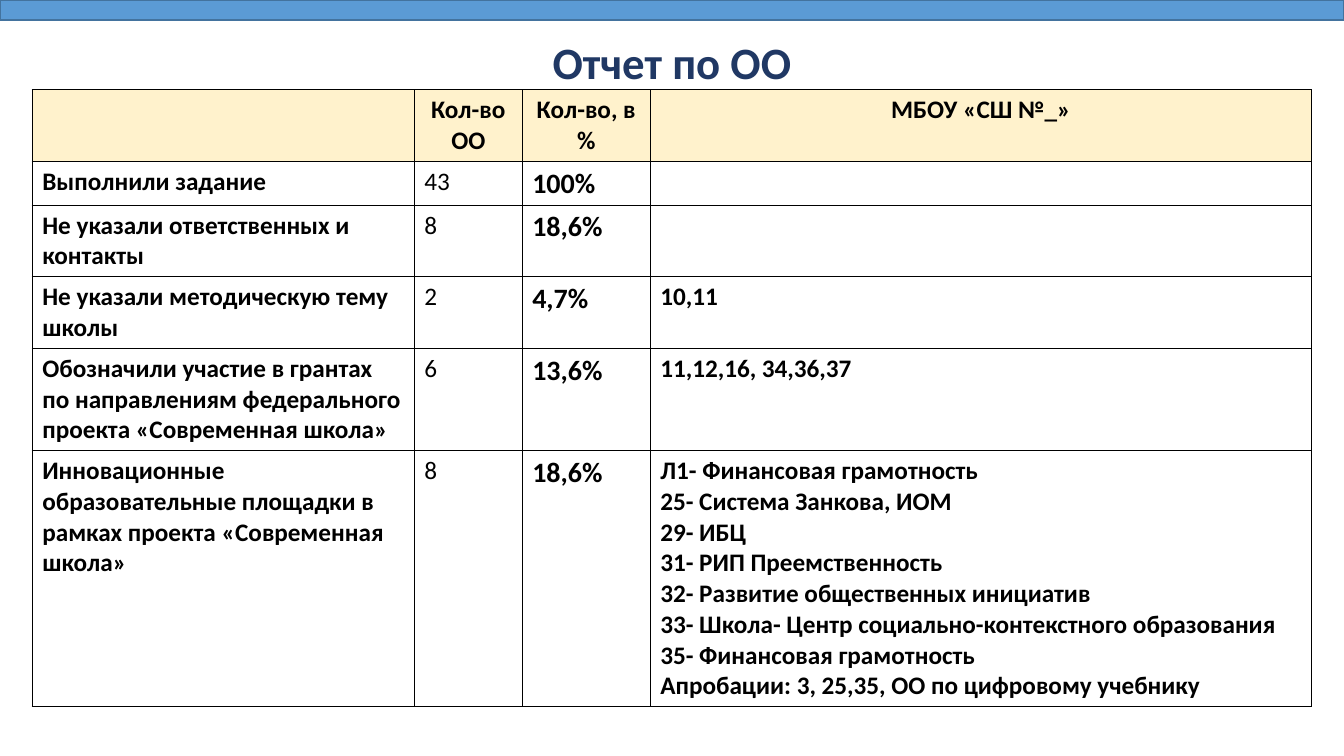
"""Builds the slide with the school report table."""
from lxml.etree import SubElement
from pptx import Presentation
from pptx.dml.color import RGBColor
from pptx.enum.shapes import MSO_SHAPE
from pptx.enum.text import MSO_ANCHOR, PP_ALIGN
from pptx.oxml.ns import qn
from pptx.util import Inches, Pt

TITLE = "Отчет по ОО"
HEADER = ["", "Кол-во ОО", "Кол-во, в %", "МБОУ «СШ №_»"]
ROWS = [
    ("Выполнили задание", "43", "100%", ""),
    ("Не указали ответственных и контакты", "8", "18,6%", ""),
    ("Не указали методическую тему школы", "2", "4,7%", "10,11"),
    ("Обозначили участие в грантах по направлениям федерального проекта «Современная школа»",
     "6", "13,6%", "11,12,16, 34,36,37"),
    ("Инновационные образовательные площадки в рамках проекта «Современная школа»",
     "8", "18,6%", [
         "Л1- Финансовая грамотность",
         "25- Система Занкова, ИОМ",
         "29- ИБЦ",
         "31- РИП Преемственность",
         "32- Развитие общественных инициатив",
         "33- Школа- Центр социально-контекстного образования",
         "35- Финансовая грамотность",
         "Апробации: 3, 25,35, ОО по цифровому учебнику",
     ]),
]
COLORS = {"bar": "5B9BD5", "edge": "43739E", "title": "203864",
          "head": "FFF2CC", "text": "000000", "grid": "000000"}
FONT = "Calibri"
W, H = 13.33, 7.5
COLS = [3.79, 1.07, 1.27, 6.56]
ROW_LINES = [2, 1.1, 2, 2, 3, 8]
LINE_H, PAD = 0.305, 0.1
TABLE_TOP = 0.89


def rgb(name):
    return RGBColor.from_string(COLORS[name])


def write(tf, text, size=18, bold=True, color="text", align=PP_ALIGN.LEFT, spacing=1.0):
    lines = [text] if isinstance(text, str) else text
    for i, line in enumerate(lines):
        p = tf.paragraphs[0] if i == 0 else tf.add_paragraph()
        p.alignment, p.line_spacing = align, spacing
        if not line:
            p.font.size = Pt(size)
            continue
        r = p.add_run()
        r.text = line
        r.font.name, r.font.size, r.font.bold = FONT, Pt(size), bold
        r.font.color.rgb = rgb(color)


def add_borders(cell):
    tcPr = cell._tc.get_or_add_tcPr()
    for i, side in enumerate(("lnL", "lnR", "lnT", "lnB")):
        ln = SubElement(tcPr, qn(f"a:{side}"), w=str(Pt(1)))
        tcPr.insert(i, ln)
        fill = SubElement(ln, qn("a:solidFill"))
        SubElement(fill, qn("a:srgbClr"), val=COLORS["grid"])


def add_title(s):
    tb = s.shapes.add_textbox(Inches(0.92), Inches(0.4), Inches(W - 2 * 0.92), Inches(0.49))
    tf = tb.text_frame
    tf.word_wrap, tf.vertical_anchor = True, MSO_ANCHOR.MIDDLE
    write(tf, TITLE, size=32, color="title", align=PP_ALIGN.CENTER, spacing=0.9)


def add_report(s):
    heights = [n * LINE_H + PAD for n in ROW_LINES]
    width = sum(COLS)
    frame = s.shapes.add_table(len(heights), len(COLS), Inches((W - width) / 2),
                               Inches(TABLE_TOP), Inches(width), Inches(sum(heights)))
    table = frame.table
    table.horz_banding = False
    for col, w in zip(table.columns, COLS):
        col.width = Inches(w)
    for row, h in zip(table.rows, heights):
        row.height = Inches(h)
    for i, values in enumerate([HEADER, *ROWS]):
        for j, text in enumerate(values):
            cell = table.cell(i, j)
            if i == 0:
                cell.fill.solid()
                cell.fill.fore_color.rgb = rgb("head")
                write(cell.text_frame, text, align=PP_ALIGN.CENTER)
            else:
                cell.fill.background()
                write(cell.text_frame, text, size=20 if j == 2 else 18, bold=j != 1)
            add_borders(cell)


def add_bar(s):
    sp = s.shapes.add_shape(MSO_SHAPE.RECTANGLE, 0, 0, Inches(W), Inches(0.2))
    sp.shadow.inherit = False
    sp.fill.solid()
    sp.fill.fore_color.rgb = rgb("bar")
    sp.line.color.rgb = rgb("edge")
    sp.line.width = Pt(1)


def main():
    prs = Presentation()
    prs.slide_width, prs.slide_height = Inches(W), Inches(H)
    s = prs.slides.add_slide(prs.slide_layouts[6])
    add_title(s)
    add_report(s)
    add_bar(s)
    prs.save("out.pptx")


if __name__ == "__main__":
    main()
